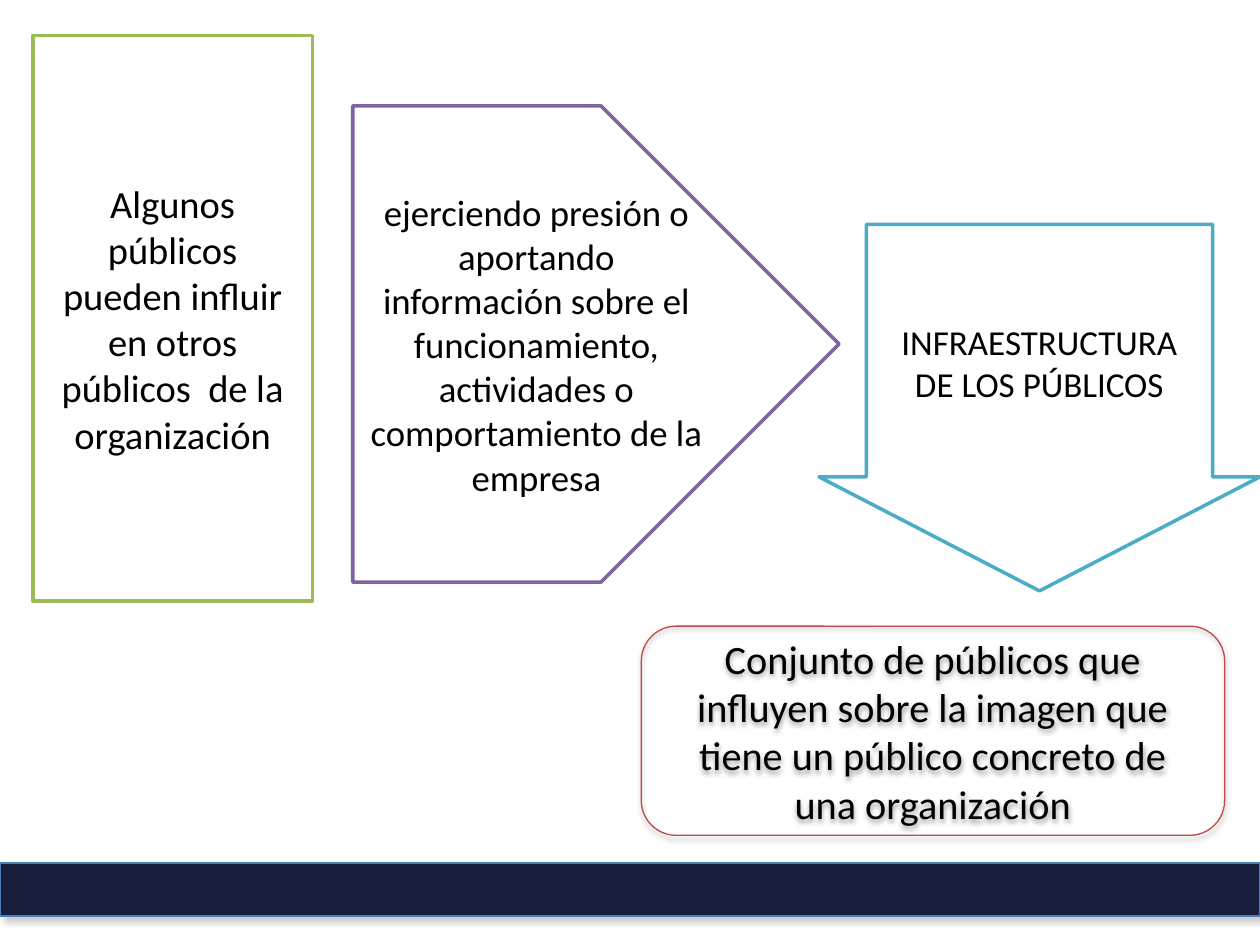
import pptx
import pptx.util
import pptx.dml.color
import pptx.enum.shapes
import pptx.enum.text
import pptx.oxml
import pptx.oxml.ns

Inches, Pt = pptx.util.Inches, pptx.util.Pt
SHAPE = pptx.enum.shapes.MSO_SHAPE

# fill None leaves the shape empty; shadow is (colour, opacity %, blur pt, distance pt, angle)
SHAPES = [
    dict(kind=SHAPE.RECTANGLE, at=(0.26, 0.28, 2.22, 4.49), fill="FFFFFF",
         line=("9BBB59", 2), size=22,
         text="Algunos públicos pueden influir en otros públicos  de la organización"),
    dict(kind=SHAPE.PENTAGON, at=(2.8, 0.84, 3.86, 3.78), fill="FFFFFF",
         line=("8064A2", 2), size=21,
         text="ejerciendo presión o aportando información sobre el funcionamiento, "
              "actividades o comportamiento de la empresa"),
    dict(kind=SHAPE.DOWN_ARROW, at=(6.5, 1.78, 3.5, 2.91), fill="FFFFFF",
         line=("4BACC6", 2), adjust=(0.785, 0.311), size=20,
         text="INFRAESTRUCTURA DE LOS PÚBLICOS"),
    dict(kind=SHAPE.ROUNDED_RECTANGLE, at=(5.09, 4.97, 4.63, 1.66), fill=None,
         line=("BE4B48", 0.75), shadow=("000000", 38, 3.1, 1.6, 90), size=23,
         text="Conjunto de públicos que influyen sobre la imagen que tiene "
              "un público concreto de una organización"),
    dict(kind=SHAPE.RECTANGLE, at=(0, 6.85, 10, 0.42), fill="191E3C",
         line=("4A7EBB", 0.75), shadow=("808080", 40, 4, 3, 45)),
]


def rgb(value):
    return pptx.dml.color.RGBColor.from_string(value)


def add_shadow(sp, color, opacity, blur, distance, angle):
    effects = sp._element.spPr.find(pptx.oxml.ns.qn("a:effectLst"))
    effects.append(pptx.oxml.parse_xml(
        f'<a:outerShdw {pptx.oxml.ns.nsdecls("a")} blurRad="{Pt(blur)}" '
        f'dist="{Pt(distance)}" dir="{angle * 60000}" rotWithShape="0">'
        f'<a:srgbClr val="{color}"><a:alpha val="{opacity * 1000}"/></a:srgbClr>'
        '</a:outerShdw>'))


def add_text(sp, text, size):
    tf = sp.text_frame
    tf.word_wrap = True
    tf.vertical_anchor = pptx.enum.text.MSO_ANCHOR.MIDDLE
    p = tf.paragraphs[0]
    p.alignment = pptx.enum.text.PP_ALIGN.CENTER
    r = p.add_run()
    r.text = text
    for name, value in {"name": "Calibri", "size": Pt(size)}.items():
        setattr(r.font, name, value)
    r.font.color.rgb = rgb("000000")


def add_block(s, kind, at, fill, line, adjust=(), shadow=None, text=None, size=None):
    sp = s.shapes.add_shape(kind, *map(Inches, at))
    for i, value in enumerate(adjust):
        sp.adjustments[i] = value
    if fill:
        sp.fill.solid()
        sp.fill.fore_color.rgb = rgb(fill)
    else:
        sp.fill.background()
    color, width = line
    sp.line.color.rgb = rgb(color)
    sp.line.width = Pt(width)
    sp.shadow.inherit = False
    if shadow:
        add_shadow(sp, *shadow)
    if text:
        add_text(sp, text, size)


def main():
    prs = pptx.Presentation()
    prs.slide_width, prs.slide_height = Inches(10), Inches(7.5)
    s = prs.slides.add_slide(prs.slide_layouts[6])
    for block in SHAPES:
        add_block(s, **block)
    prs.save("out.pptx")


if __name__ == "__main__":
    main()
